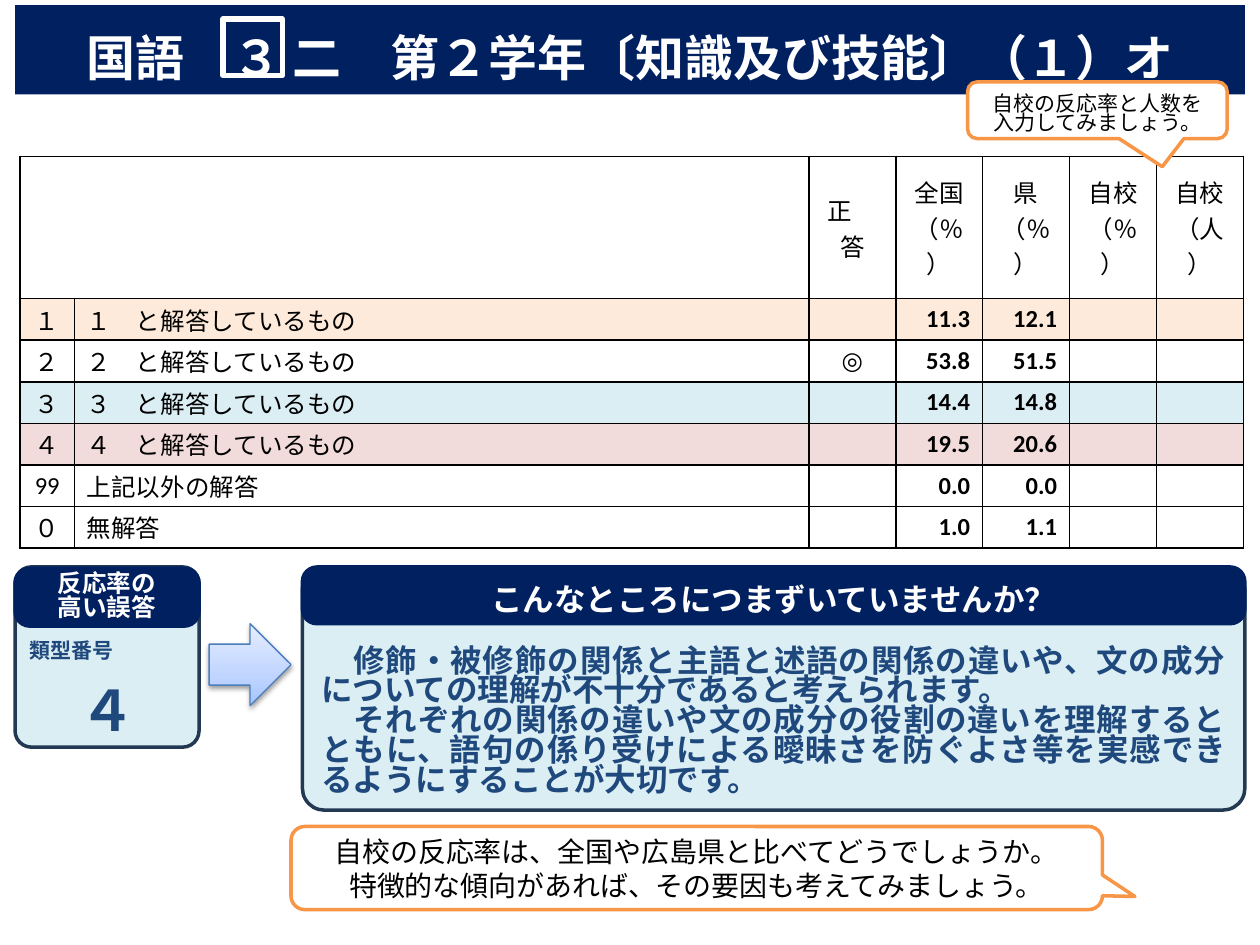
from dataclasses import dataclass
from typing import NamedTuple, Optional

from lxml.etree import SubElement
from pptx import Presentation
from pptx.dml.color import RGBColor
from pptx.enum.shapes import MSO_SHAPE as Kind
from pptx.enum.text import MSO_ANCHOR as Anchor, PP_ALIGN as Align
from pptx.oxml.ns import qn
from pptx.util import Inches, Pt


@dataclass(frozen=True)
class Theme:
    navy: str = "002060"
    edge: str = "233953"
    ink: str = "1F497D"
    pale: str = "DBEEF4"
    peach: str = "FDEADA"
    rose: str = "F2DCDB"
    flame: str = "F79646"
    blue: str = "4B7EBC"
    white: str = "FFFFFF"
    black: str = "000000"
    face: str = "Noto Sans CJK JP"
    digit: str = "Calibri"
    title: int = 28
    mark: int = 32
    head: int = 18
    talk: int = 16
    cell: int = 14
    note: int = 12


T = Theme()


class Style(NamedTuple):
    size: int
    color: str
    bold: bool = True
    face: str = T.face
    align: Align = Align.CENTER


class Line(NamedTuple):
    text: str
    pitch: Optional[int] = None


class Box(NamedTuple):
    kind: Kind
    place: tuple
    fill: Optional[str]
    edge: Optional[str]
    width: float = 2
    adj: tuple = ()
    lines: tuple = ()
    style: Optional[Style] = None
    anchor: Anchor = Anchor.MIDDLE
    top: float = 0.05
    foot: float = 0.05


class Row(NamedTuple):
    code: str
    answer: str
    right: str
    nation: str
    local: str
    fill: Optional[str] = None


ROUND, BAND = (0.09,), (0.255,)
WHITE = Style(T.cell, T.white)

BOXES = (
    Box(Kind.ROUNDED_RECTANGLE, (0.12, 4.5, 1.46, 1.43), T.pale, T.edge, adj=ROUND,
        lines=(Line("４"),), style=Style(T.mark, T.ink), anchor=Anchor.BOTTOM, foot=0),
    Box(Kind.ROUNDED_RECTANGLE, (0.12, 4.51, 1.46, 0.46), T.navy, T.navy, adj=BAND,
        lines=(Line("反応率の", 14), Line("高い誤答", 14)), style=WHITE),
    Box(Kind.ROUNDED_RECTANGLE, (2.4, 4.5, 7.48, 1.93), T.pale, T.edge, adj=ROUND,
        lines=(Line("　修飾・被修飾の関係と主語と述語の関係の違いや、文の成分についての理解が不十分であると考えられます。", 17),
               Line("　それぞれの関係の違いや文の成分の役割の違いを理解するとともに、語句の係り受けによる曖昧さを防ぐよさ等を実感できるようにすることが大切です。", 17)),
        style=Style(T.head, T.ink, align=Align.JUSTIFY), anchor=Anchor.BOTTOM),
    Box(Kind.ROUNDED_RECTANGLE, (2.4, 4.5, 7.48, 0.45), T.navy, T.navy, adj=BAND,
        lines=(Line("こんなところにつまずいていませんか？", 26),),
        style=WHITE._replace(size=T.head)),
    Box(Kind.RECTANGLE, (0.12, 0.04, 9.76, 0.71), T.navy, None,
        lines=(Line("国語　３ 二　第２学年〔知識及び技能〕（１）オ"),),
        style=WHITE._replace(size=T.title), top=0.16),
    Box(Kind.ROUNDED_RECTANGULAR_CALLOUT, (2.31, 6.56, 6.44, 0.66), T.white, T.flame,
        adj=(0.54, 0.342, 0.167),
        lines=(Line("自校の反応率は、全国や広島県と比べてどうでしょうか。"),
               Line("特徴的な傾向があれば、その要因も考えてみましょう。")),
        style=Style(T.talk, T.black, False)),
    Box(Kind.ROUNDED_RECTANGULAR_CALLOUT, (7.68, 0.65, 2.06, 0.45), T.white, T.flame,
        adj=(0.25, 0.996, 0.167),
        lines=(Line("自校の反応率と人数を", 17), Line("入力してみましょう。", 11)),
        style=Style(T.note, T.black, False)),
    Box(Kind.RECTANGLE, (1.77, 0.15, 0.47, 0.45), None, T.white, 3),
)

HEADS = ("正　答", "全国（％）", "県（％）", "自校（％）", "自校（人）")
ROWS = (
    Row("１", "１　と解答しているもの", "", "11.3", "12.1", T.peach),
    Row("２", "２　と解答しているもの", "◎", "53.8", "51.5"),
    Row("３", "３　と解答しているもの", "", "14.4", "14.8", T.pale),
    Row("４", "４　と解答しているもの", "", "19.5", "20.6", T.rose),
    Row("99", "上記以外の解答", "", "0.0", "0.0"),
    Row("０", "無解答", "", "1.0", "1.1"),
)
WIDTHS = (0.43, 5.83) + (0.69,) * 5
TALL, LOW = 1.13, 0.33


def rgb(code: str) -> RGBColor:
    return RGBColor.from_string(code)


def paint(fill, code: Optional[str]) -> None:
    if code:
        fill.solid()
        fill.fore_color.rgb = rgb(code)
    else:
        fill.background()


def write(frame, lines: tuple, style: Style) -> None:
    for i, line in enumerate(lines):
        para = frame.add_paragraph() if i else frame.paragraphs[0]
        para.text, para.alignment = line.text, style.align
        if line.pitch:
            para.line_spacing = Pt(line.pitch)
        font = para.font
        font.size, font.bold, font.name = Pt(style.size), style.bold, style.face
        font.color.rgb = rgb(style.color)
        base = para._p.pPr.find(qn("a:defRPr"))
        SubElement(base, qn("a:ea")).set("typeface", T.face)


def draw(shapes, box: Box):
    shape = shapes.add_shape(box.kind, *map(Inches, box.place))
    shape.shadow.inherit = False
    for i, value in enumerate(box.adj):
        shape.adjustments[i] = value
    paint(shape.fill, box.fill)
    paint(shape.line.fill, box.edge)
    if box.edge:
        shape.line.width = Pt(box.width)
    if box.lines:
        frame = shape.text_frame
        frame.word_wrap, frame.vertical_anchor = True, box.anchor
        frame.margin_top, frame.margin_bottom = Inches(box.top), Inches(box.foot)
        write(frame, box.lines, box.style)
    return shape


def tint(parent, code: str):
    node = SubElement(parent, qn("a:srgbClr"))
    node.set("val", code)
    return node


def arrow(shapes) -> None:
    shape = draw(shapes, Box(Kind.RIGHT_ARROW, (1.66, 4.95, 0.65, 0.65), None, T.blue, 0.75))
    shape.fill.gradient()
    shape.fill.gradient_angle = 90
    props = shape._element.spPr
    stops = props.find(".//" + qn("a:gsLst"))
    stops.clear()
    for pos, code in ((0, "A4C4FF"), (35, "BFD4FF"), (100, "E6EEFF")):
        stop = SubElement(stops, qn("a:gs"))
        stop.set("pos", str(pos * 1000))
        tint(stop, code)
    shade = SubElement(props.find(qn("a:effectLst")), qn("a:outerShdw"))
    for key, value in (("blurRad", Pt(3.1)), ("dist", Pt(1.6)), ("dir", 5400000)):
        shade.set(key, str(value))
    SubElement(tint(shade, T.black), qn("a:alpha")).set("val", "38000")


def finish(cell, text: str, style: Style, fill: Optional[str] = None) -> None:
    props = cell._tc.get_or_add_tcPr()
    for side in ("lnL", "lnR", "lnT", "lnB"):
        rule = SubElement(props, qn("a:" + side))
        rule.set("w", str(Pt(1)))
        tint(SubElement(rule, qn("a:solidFill")), T.black)
    paint(cell.fill, fill)
    cell.vertical_anchor = Anchor.MIDDLE
    write(cell.text_frame, (Line(text),), style)


def grid(shapes) -> None:
    place = (0.16, 1.24, sum(WIDTHS), TALL + LOW * len(ROWS))
    table = shapes.add_table(len(ROWS) + 1, len(WIDTHS), *map(Inches, place)).table
    table.first_row = table.horz_banding = False
    for col, width in zip(table.columns, WIDTHS):
        col.width = Inches(width)
    for i, row in enumerate(table.rows):
        row.height = Inches(LOW if i else TALL)
    head = Style(T.cell, T.black, False)
    table.cell(0, 0).merge(table.cell(0, 1))
    for c, text in enumerate(("", "") + HEADS):
        cell = table.cell(0, c)
        finish(cell, text, head)
        if text:
            cell._tc.tcPr.set("vert", "eaVert")
    mid = head._replace(face=T.digit)
    rate = mid._replace(bold=True, align=Align.RIGHT)
    styles = (mid, mid._replace(align=Align.JUSTIFY), mid, rate, rate, mid, mid)
    for r, row in enumerate(ROWS, 1):
        for c, (text, style) in enumerate(zip(row[:5] + ("", ""), styles)):
            cell = table.cell(r, c)
            cell.margin_top = cell.margin_bottom = 0
            finish(cell, text, style, row.fill)


def main() -> None:
    """Build the answer rate slide and save it."""
    deck = Presentation()
    deck.slide_width, deck.slide_height = Inches(10), Inches(7.5)
    shapes = deck.slides.add_slide(deck.slide_layouts[6]).shapes
    grid(shapes)
    for box in BOXES:
        draw(shapes, box)
    arrow(shapes)
    label = shapes.add_textbox(*map(Inches, (0.06, 5.01, 1.02, 0.3))).text_frame
    label.word_wrap = True
    write(label, (Line("類型番号"),), Style(T.note, T.ink))
    deck.save("out.pptx")


if __name__ == "__main__":
    main()
